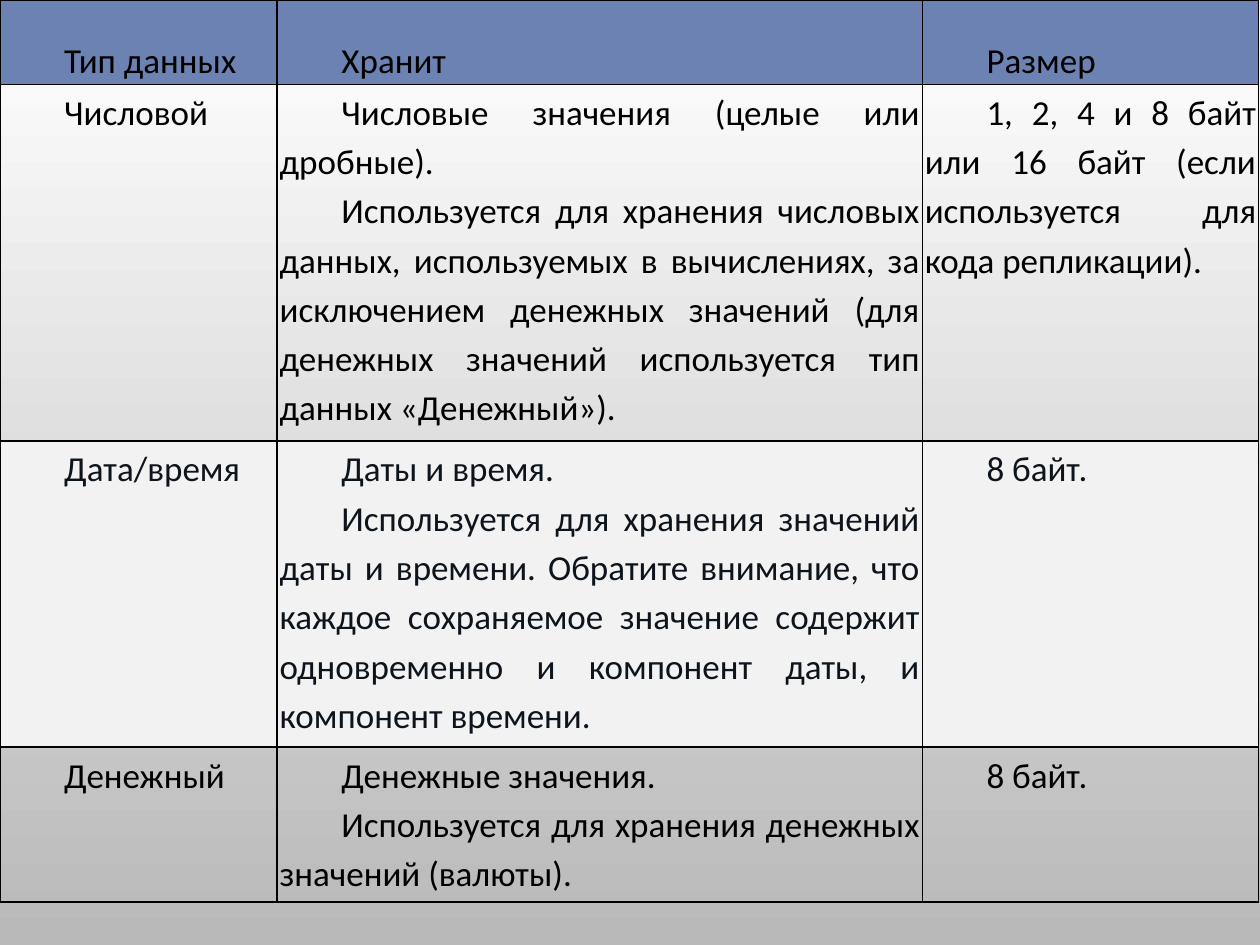
from lxml.etree import SubElement
from pptx import Presentation
from pptx.dml.color import RGBColor as RGB
from pptx.enum.text import MSO_ANCHOR as ANCHOR, PP_ALIGN as ALIGN
from pptx.oxml.ns import qn
from pptx.util import Inches, Pt

COLORS = {
    "top": "FFFFFF", "bottom": "B9B9B9", "header": "6B82B2",
    "light": "F2F2F2", "text": "000000", "navy": "0D141C", "border": "000000",
}
COLUMNS = [2.2, 5.12, 2.67]
ROWS = [0.67, 2.83, 2.43, 1.23]

# Each row: fill, text colour, anchor, then cells as lists of paragraphs
DATA_TYPES = [
    ("header", "text", ANCHOR.BOTTOM, [["Тип данных"], ["Хранит"], ["Размер"]]),
    (None, "text", ANCHOR.TOP, [
        ["Числовой"],
        ["Числовые значения (целые или дробные).",
         "Используется для хранения числовых данных, используемых в вычислениях, "
         "за исключением денежных значений (для денежных значений используется "
         "тип данных «Денежный»)."],
        ["1, 2, 4 и 8 байт или 16 байт (если используется для кода репликации)."]]),
    ("light", "navy", ANCHOR.TOP, [
        ["Дата/время"],
        ["Даты и время.",
         "Используется для хранения значений даты и времени. Обратите внимание, "
         "что каждое сохраняемое значение содержит одновременно и компонент даты, "
         "и компонент времени."],
        ["8 байт."]]),
    (None, "text", ANCHOR.TOP, [
        ["Денежный"],
        ["Денежные значения.",
         "Используется для хранения денежных значений (валюты)."],
        ["8 байт."]]),
]


def write(frame, paragraphs, *, color, size=20, font="Calibri", indent=0.49, spacing=1.15):
    for number, words in enumerate(paragraphs):
        paragraph = frame.add_paragraph() if number else frame.paragraphs[0]
        paragraph.alignment = ALIGN.JUSTIFY
        paragraph.line_spacing = spacing
        properties = paragraph._p.get_or_add_pPr()
        properties.set("marL", "0")
        properties.set("indent", str(Inches(indent)))
        run = paragraph.add_run()
        run.text = words
        run.font.size, run.font.name = Pt(size), font
        run.font.color.rgb = RGB.from_string(COLORS[color])


def add_borders(cell, color, width=1):
    properties = cell._tc.get_or_add_tcPr()
    for side in ("lnL", "lnR", "lnT", "lnB"):
        line = SubElement(properties, qn(f"a:{side}"), w=str(Pt(width)))
        fill = SubElement(line, qn("a:solidFill"))
        SubElement(fill, qn("a:srgbClr"), val=COLORS[color])


prs = Presentation()
prs.slide_width, prs.slide_height = Inches(10), Inches(7.5)
slide = prs.slides.add_slide(prs.slide_layouts[6])

# Background fading from top to bottom
backdrop = slide.background.fill
backdrop.gradient()
backdrop.gradient_angle = 270
for stop, position, shade in zip(backdrop.gradient_stops, (0, 1), ("top", "bottom")):
    stop.position = position
    stop.color.rgb = RGB.from_string(COLORS[shade])

# Table of data types
table = slide.shapes.add_table(len(ROWS), len(COLUMNS), 0, 0,
                               prs.slide_width, Inches(sum(ROWS))).table
table.first_row = table.horz_banding = False
for column, width in zip(table.columns, COLUMNS):
    column.width = Inches(width)
for row, height in zip(table.rows, ROWS):
    row.height = Inches(height)

# Cell text, borders and fills
for row, (fill, color, anchor, texts) in zip(table.rows, DATA_TYPES):
    for cell, paragraphs in zip(row.cells, texts):
        cell.margin_left = cell.margin_right = Inches(0.02)
        cell.margin_top = cell.margin_bottom = Inches(0.01)
        cell.vertical_anchor = anchor
        add_borders(cell, "border")
        if fill:
            cell.fill.solid()
            cell.fill.fore_color.rgb = RGB.from_string(COLORS[fill])
        else:
            cell.fill.background()
        write(cell.text_frame, paragraphs, color=color)

prs.save("out.pptx")
